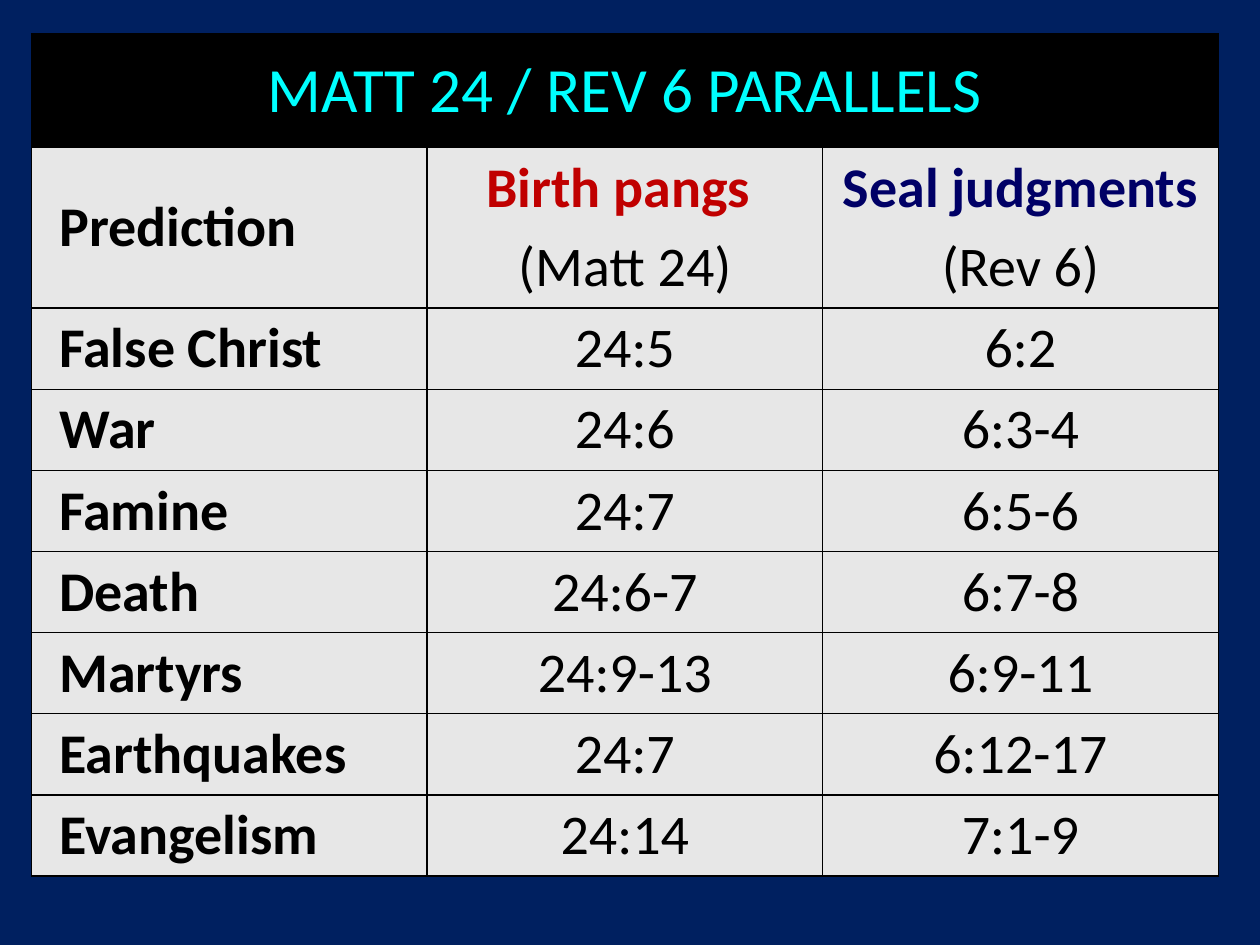
import dataclasses

import pptx
import pptx.dml.color
import pptx.enum.text
import pptx.util
from lxml import etree
from pptx.oxml.ns import qn

Inches = pptx.util.Inches
Pt = pptx.util.Pt
ALIGN = pptx.enum.text.PP_ALIGN


@dataclasses.dataclass(frozen=True)
class Theme:
    font: str = "Calibri"
    title_size: int = 36
    body_size: int = 32
    paragraph_gap: float = 6.4
    border_width: int = 1
    background: str = "002060"
    title_fill: str = "000000"
    title_text: str = "00FFFF"
    cell_fill: str = "E7E7E7"
    text: str = "000000"
    pangs: str = "C00000"
    seals: str = "000066"


THEME = Theme()

PARALLELS = [
    ("False Christ", "24:5", "6:2"),
    ("War", "24:6", "6:3-4"),
    ("Famine", "24:7", "6:5-6"),
    ("Death", "24:6-7", "6:7-8"),
    ("Martyrs", "24:9-13", "6:9-11"),
    ("Earthquakes", "24:7", "6:12-17"),
    ("Evangelism", "24:14", "7:1-9"),
]


def color(value):
    return pptx.dml.color.RGBColor.from_string(value)


def style_cell(cell, fill):
    properties = cell._tc.get_or_add_tcPr()
    for side in ("lnL", "lnR", "lnT", "lnB"):
        line = etree.SubElement(properties, qn(f"a:{side}"), w=str(Pt(THEME.border_width)))
        solid = etree.SubElement(line, qn("a:solidFill"))
        etree.SubElement(solid, qn("a:srgbClr"), val=THEME.text)
    cell.fill.solid()
    cell.fill.fore_color.rgb = color(fill)
    cell.vertical_anchor = pptx.enum.text.MSO_ANCHOR.MIDDLE


def write_line(cell, text, text_color=THEME.text, bold=False,
               size=THEME.body_size, align=ALIGN.CENTER, first=True):
    frame = cell.text_frame
    paragraph = frame.paragraphs[0] if first else frame.add_paragraph()
    paragraph.alignment = align
    if not first:
        paragraph.space_before = Pt(THEME.paragraph_gap)
    if align == ALIGN.LEFT:
        properties = paragraph._p.get_or_add_pPr()
        properties.set("marL", str(Inches(0.12)))
        properties.set("indent", "0")
    run = paragraph.add_run()
    run.text = text
    run.font.name = THEME.font
    run.font.size = Pt(size)
    run.font.bold = bold
    run.font.color.rgb = color(text_color)


def write_label(cell, text):
    write_line(cell, text, bold=True, align=ALIGN.LEFT)


def write_heading(cell, name, name_color, chapter):
    write_line(cell, name, name_color, bold=True)
    write_line(cell, chapter, first=False)


def add_parallels_table(slide, left, top, width):
    heights = [Inches(0.9), Inches(1.27)] + [Inches(0.64)] * len(PARALLELS)
    table = slide.shapes.add_table(len(heights), 3, left, top, width, sum(heights)).table
    table.first_row = False
    table.horz_banding = False
    for column in table.columns:
        column.width = width // 3
    for index, (row, height) in enumerate(zip(table.rows, heights)):
        row.height = height
        for cell in row.cells:
            style_cell(cell, THEME.cell_fill if index else THEME.title_fill)

    title = table.cell(0, 0)
    title.merge(table.cell(0, 2))
    write_line(title, "MATT 24 / REV 6 PARALLELS", THEME.title_text, size=THEME.title_size)

    write_label(table.cell(1, 0), "Prediction")
    write_heading(table.cell(1, 1), "Birth pangs ", THEME.pangs, "(Matt 24)")
    write_heading(table.cell(1, 2), "Seal judgments", THEME.seals, "(Rev 6)")

    for row, (prediction, *verses) in enumerate(PARALLELS, start=2):
        write_label(table.cell(row, 0), prediction)
        for column, verse in enumerate(verses, start=1):
            write_line(table.cell(row, column), verse)


def main():
    presentation = pptx.Presentation()
    presentation.slide_width = Inches(10)
    presentation.slide_height = Inches(7.5)
    slide = presentation.slides.add_slide(presentation.slide_layouts[6])
    slide.background.fill.solid()
    slide.background.fill.fore_color.rgb = color(THEME.background)
    add_parallels_table(slide, Inches(0.25), Inches(0.27), Inches(9.42))
    presentation.save("out.pptx")


if __name__ == "__main__":
    main()
